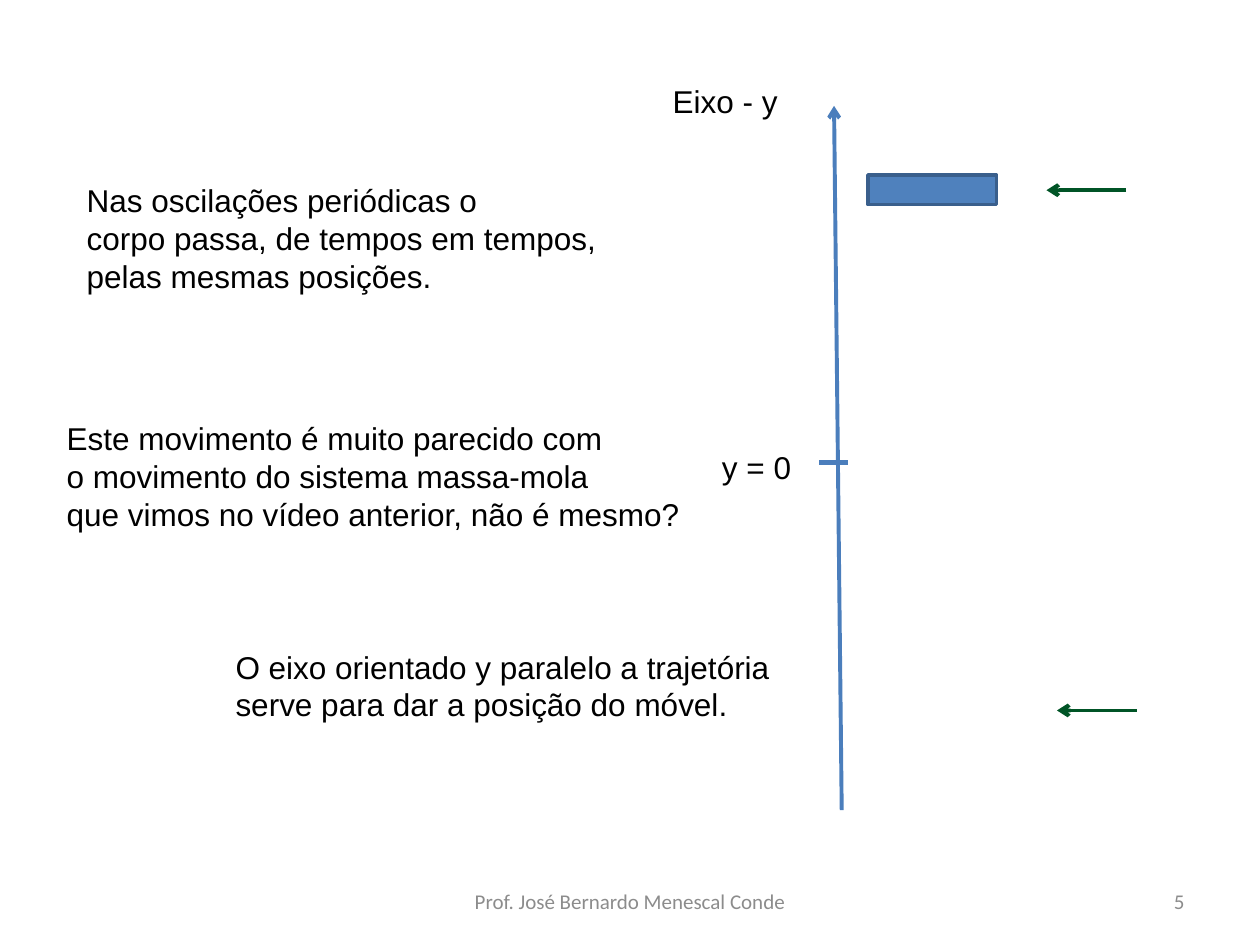
"""Slide on periodic oscillation along an oriented y axis."""
from dataclasses import dataclass

from lxml import etree
from pptx import Presentation
from pptx.dml.color import RGBColor
from pptx.enum import shapes, text
from pptx.oxml import ns
from pptx.util import Pt


@dataclass(frozen=True)
class Theme:
    ink: str = "000000"
    muted: str = "8C8C8C"
    block: str = "4F81BD"
    block_edge: str = "3A5F8C"
    axis: str = "4B7EBC"
    marker: str = "005426"
    body_font: str = "Arial"
    footer_font: str = "Calibri"
    body_size: float = 18
    footer_size: float = 12


THEME = Theme()


def add_text(s, box, lines, font, size, color, align, anchor, wrap):
    tf = s.shapes.add_textbox(*map(Pt, box)).text_frame
    tf.word_wrap = wrap
    tf.vertical_anchor = anchor
    tf.text = "\n".join(lines)
    for p in tf.paragraphs:
        p.alignment = align
        p.font.name = font
        p.font.size = Pt(size)
        p.font.color.rgb = RGBColor.from_string(color)
    return tf


def add_note(s, box, *lines):
    tf = add_text(s, box, lines, THEME.body_font, THEME.body_size, THEME.ink,
                  text.PP_ALIGN.LEFT, text.MSO_ANCHOR.TOP, False)
    tf.auto_size = text.MSO_AUTO_SIZE.SHAPE_TO_FIT_TEXT


def add_footer(s, left, width, line, align):
    add_text(s, (left, 500.5, width, 28.75), [line], THEME.footer_font,
             THEME.footer_size, THEME.muted, align, text.MSO_ANCHOR.MIDDLE, True)


def add_line(s, start, end, color, width=2.25, arrow=True):
    c = s.shapes.add_connector(shapes.MSO_CONNECTOR.STRAIGHT,
                               *map(Pt, (*start, *end)))
    c.line.color.rgb = RGBColor.from_string(color)
    c.line.width = Pt(width)
    if arrow:
        ln = c.line._get_or_add_ln()
        etree.SubElement(ln, ns.qn("a:tailEnd"), type="arrow")
    etree.SubElement(c._element.spPr, ns.qn("a:effectLst"))


def add_block(s, box):
    sp = s.shapes.add_shape(shapes.MSO_SHAPE.RECTANGLE, *map(Pt, box))
    sp.shadow.inherit = False
    sp.fill.solid()
    sp.fill.fore_color.rgb = RGBColor.from_string(THEME.block)
    sp.line.color.rgb = RGBColor.from_string(THEME.block_edge)
    sp.line.width = Pt(2)


def main():
    prs = Presentation()
    prs.slide_width, prs.slide_height = Pt(720), Pt(540)
    s = prs.slides.add_slide(prs.slide_layouts[6])

    add_footer(s, 246, 228, "Prof. José Bernardo Menescal Conde",
               text.PP_ALIGN.CENTER)
    add_footer(s, 516, 168, "5", text.PP_ALIGN.RIGHT)

    add_note(s, (42.5, 100, 308, 72.7), "Nas oscilações periódicas o",
             "corpo passa, de tempos em tempos,", "pelas mesmas posições.")
    add_note(s, (31, 236, 368, 72.7), "Este movimento é muito parecido com",
             "o movimento do sistema massa-mola",
             "que vimos no vídeo anterior, não é mesmo?")
    add_note(s, (127.5, 366.5, 322.5, 51),
             "O eixo orientado y paralelo a trajetória",
             "serve para dar a posição do móvel.")

    add_block(s, (496, 100, 73.5, 17))
    for right, y in ((643.5, 108.7), (649.5, 406)):
        add_line(s, (right, y), (right - 45.5, y), THEME.marker)

    add_line(s, (481, 463), (476.6, 60.5), THEME.axis)
    add_line(s, (468, 264.2), (484.5, 264.2), THEME.axis, 3, False)
    add_note(s, (377.3, 43.2, 75, 29), "Eixo - y")
    add_note(s, (405.5, 252.7, 55, 29), "y = 0")

    prs.save("out.pptx")


if __name__ == "__main__":
    main()
